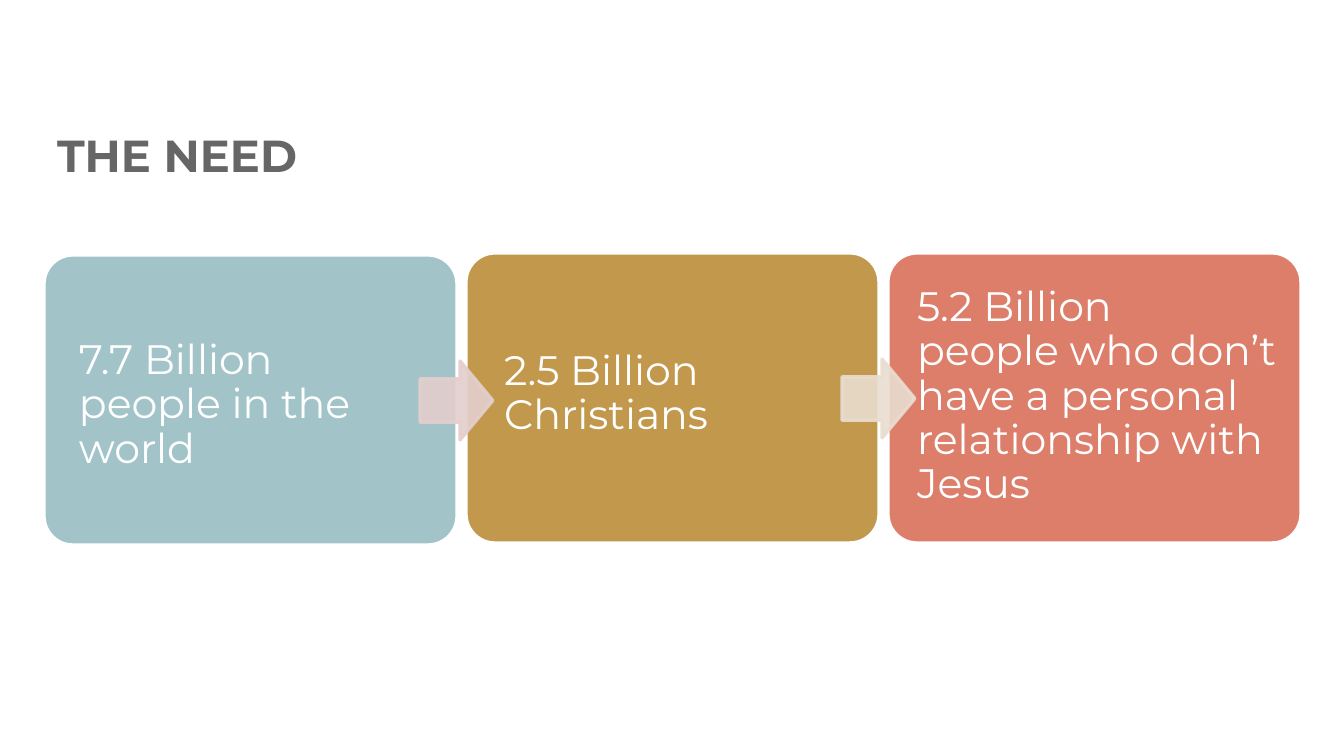
from lxml.etree import SubElement
from pptx import Presentation
from pptx.dml.color import RGBColor
from pptx.enum.shapes import MSO_SHAPE
from pptx.enum.text import MSO_ANCHOR, PP_ALIGN
from pptx.oxml.ns import qn
from pptx.util import Emu, Pt

TITLE = "THE NEED"
# Card top, fill, text area (left, top, width, height), paragraphs
CARDS = [
    (255, "A2C4C9", (66, 304, 366, 203), ["7.7 Billion people in the world"]),
    (253, "C2984C", (491, 270, 371, 249), ["2.5 Billion Christians"]),
    (253, "DD7E6B", (904, 258, 395, 278),
     ["5.2 Billion", "people who don’t have a personal relationship with Jesus"]),
]
# Arrow top and colour
ARROWS = [(364, "E3CFCD"), (362, "E9DDCF")]

FONT = "Montserrat"
CARD_LEFT, CARD_WIDTH, CARD_HEIGHT, PITCH = 44, 413, 290, 422
ARROW_LEFT, ARROW_WIDTH, ARROW_HEIGHT = 417, 79, 73


def px(value):
    return Emu(round(value * 914400 / 134.4))


def color(value):
    return RGBColor.from_string(value)


def add_shape(slide, kind, box, fill, adjustments, opacity=None):
    shape = slide.shapes.add_shape(kind, *map(px, box))
    shape.shadow.inherit = False
    for index, value in enumerate(adjustments):
        shape.adjustments[index] = value
    shape.fill.solid()
    shape.fill.fore_color.rgb = color(fill)
    shape.line.color.rgb = color("FFFFFF" if opacity is None else fill)
    shape.line.width = Pt(1.75)
    if opacity is not None:
        for element in shape._element.spPr.iter(qn("a:srgbClr")):
            SubElement(element, qn("a:alpha"), val=str(opacity * 1000))
    return shape


def add_text(slide, box, paragraphs, size, text_color, anchor, inset,
             bold=False, spacing=1.0):
    frame = slide.shapes.add_textbox(*map(px, box)).text_frame
    frame.word_wrap = True
    frame.vertical_anchor = anchor
    frame.margin_left = frame.margin_right = px(13)
    frame.margin_top = frame.margin_bottom = px(inset)
    frame.text = "\n".join(paragraphs)
    for paragraph in frame.paragraphs:
        paragraph.alignment = PP_ALIGN.LEFT
        paragraph.line_spacing = spacing
        paragraph.font.name = FONT
        paragraph.font.size = Pt(size)
        paragraph.font.bold = bold
        paragraph.font.color.rgb = color(text_color)


def main():
    presentation = Presentation()
    presentation.slide_width, presentation.slide_height = px(1344), px(756)
    slide = presentation.slides.add_slide(presentation.slide_layouts[6])

    add_text(slide, (44, 105, 270, 83), [TITLE], 24, "666666",
             MSO_ANCHOR.BOTTOM, 7, bold=True)

    for index, (top, fill, text_box, paragraphs) in enumerate(CARDS):
        card_box = (CARD_LEFT + index * PITCH, top, CARD_WIDTH, CARD_HEIGHT)
        add_shape(slide, MSO_SHAPE.ROUNDED_RECTANGLE, card_box, fill, [0.1])
        add_text(slide, text_box, paragraphs, 22, "FFFFFF",
                 MSO_ANCHOR.MIDDLE, 13, spacing=0.9)

    for index, (top, fill) in enumerate(ARROWS):
        arrow_box = (ARROW_LEFT + index * PITCH, top, ARROW_WIDTH, ARROW_HEIGHT)
        arrow = add_shape(slide, MSO_SHAPE.DOWN_ARROW, arrow_box, fill,
                          [0.55, 0.45], opacity=90)
        arrow.rotation = 270

    presentation.save("out.pptx")


if __name__ == "__main__":
    main()
